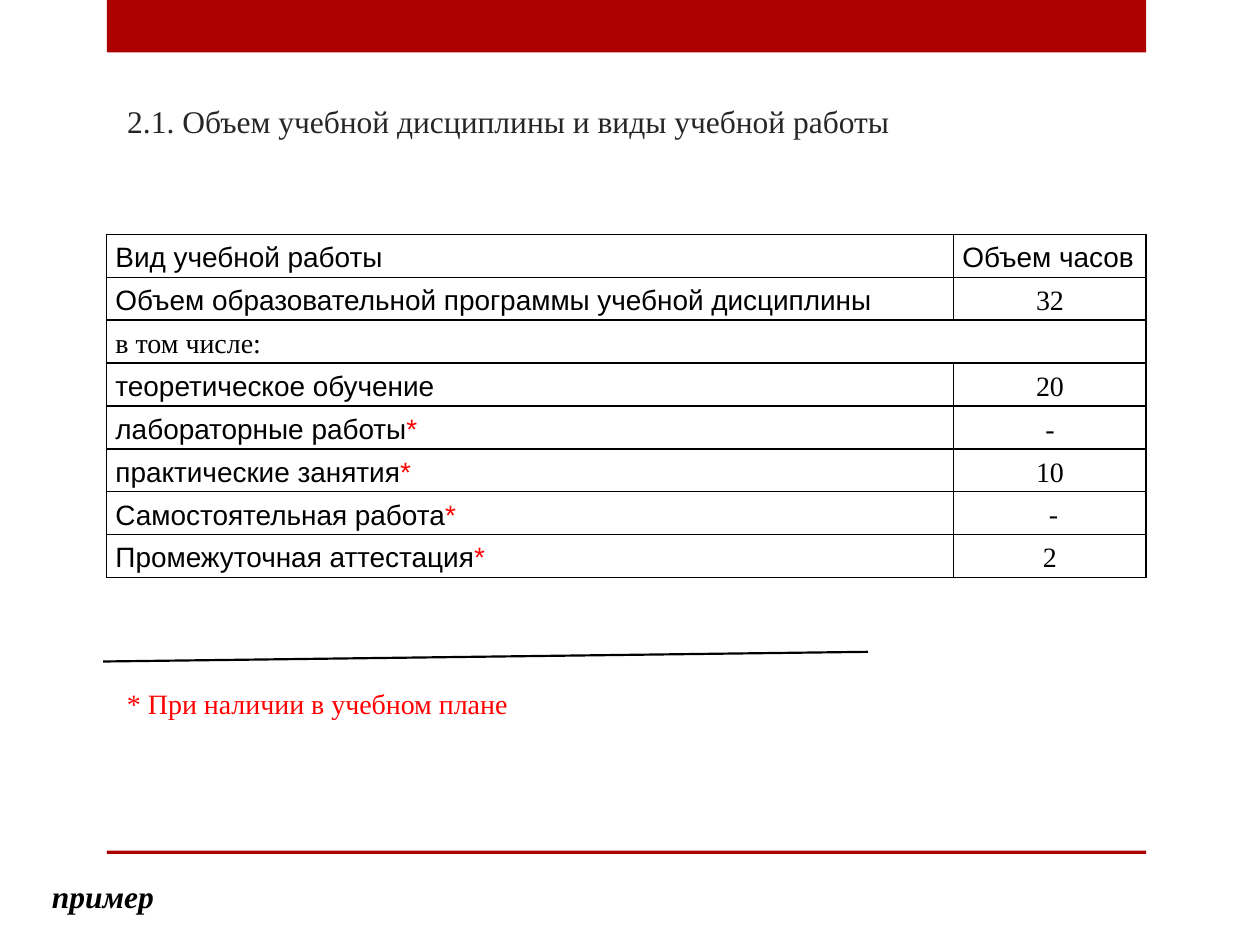
from lxml import etree
from pptx import Presentation
from pptx.dml.color import RGBColor
from pptx.enum import shapes, text
from pptx.oxml import ns, parse_xml
from pptx.util import Pt

COLORS = {"band": "AD0101", "title": "262626", "ink": "000000", "note": "FF0000"}
SERIF, SANS = "Times New Roman", "Arial"
A_NS = ns.nsdecls("a")

HOURS = [
    ("Вид учебной работы", "Объем часов"),
    ("Объем образовательной программы учебной дисциплины", "32"),
    ("в том числе:", None),
    ("теоретическое обучение", "20"),
    ("лабораторные работы*", "-"),
    ("практические занятия*", "10"),
    ("Самостоятельная работа*", "\N{NO-BREAK SPACE}-"),
    ("Промежуточная аттестация*", "2"),
]


def rgb(name):
    return RGBColor.from_string(COLORS[name])


def place(shape, box):
    shape.left, shape.top, shape.width, shape.height = map(Pt, box)


def add_run(paragraph, words, size, font, color, bold=False, italic=False):
    run = paragraph.add_run()
    run.text = words
    run.font.size, run.font.name = Pt(size), font
    run.font.bold, run.font.italic = bold, italic
    run.font.color.rgb = rgb(color)
    return run


def add_bands(slide, left, width):
    """Red band along the top edge and thin rule above the bottom margin."""
    for top, height in ((0, 30), (486, 2)):
        band = slide.shapes.add_shape(
            shapes.MSO_SHAPE.RECTANGLE, Pt(left), Pt(top), Pt(width), Pt(height))
        band.shadow.inherit = False
        band.fill.solid()
        band.fill.fore_color.rgb = rgb("band")
        band.line.fill.background()


def add_title(slide, box):
    title = slide.shapes.title
    place(title, box)
    frame = title.text_frame
    frame.auto_size = text.MSO_AUTO_SIZE.NONE
    frame.vertical_anchor = text.MSO_ANCHOR.TOP
    heading = frame.paragraphs[0]
    heading.alignment = text.PP_ALIGN.JUSTIFY
    add_run(heading, "2.1. Объем учебной дисциплины и виды учебной работы",
            18, SERIF, "title")


def format_cell(cell):
    cell.fill.background()
    cell.vertical_anchor = text.MSO_ANCHOR.MIDDLE
    cell.margin_left = cell.margin_right = Pt(5)
    cell.margin_top = cell.margin_bottom = 0
    properties = cell._tc.get_or_add_tcPr()
    for position, side in enumerate(("lnL", "lnR", "lnT", "lnB")):
        properties.insert(position, parse_xml(
            f'<a:{side} {A_NS} w="{Pt(1)}"><a:solidFill>'
            f'<a:srgbClr val="{COLORS["ink"]}"/></a:solidFill></a:{side}>'))


def fill_cell(cell, words, font, centered):
    entry = cell.text_frame.paragraphs[0]
    entry.alignment = text.PP_ALIGN.CENTER if centered else text.PP_ALIGN.LEFT
    entry.line_spacing, entry.space_after = 1.15, Pt(10)
    label = words.rstrip("*")
    add_run(entry, label, 16, font, "ink")
    if label != words:
        add_run(entry, "*", 16, font, "note")


def add_hours_table(slide, box, hours_width):
    left, top, width, height = box
    table = slide.shapes.add_table(len(HOURS), 2, *map(Pt, box)).table
    table.first_row = table.horz_banding = False
    table.columns[0].width = Pt(width - hours_width)
    table.columns[1].width = Pt(hours_width)
    for index, (work, hours) in enumerate(HOURS):
        table.rows[index].height = Pt(height / len(HOURS))
        work_cell, hours_cell = table.cell(index, 0), table.cell(index, 1)
        format_cell(work_cell)
        format_cell(hours_cell)
        fill_cell(work_cell, work, SERIF if hours is None else SANS, False)
        if hours is None:
            work_cell.merge(hours_cell)
        else:
            is_header = index == 0
            fill_cell(hours_cell, hours, SANS if is_header else SERIF, not is_header)


def add_example_label(slide, box):
    label = slide.shapes.add_textbox(*map(Pt, box)).text_frame
    label.word_wrap = False
    label.auto_size = text.MSO_AUTO_SIZE.SHAPE_TO_FIT_TEXT
    add_run(label.paragraphs[0], "пример", 18, SERIF, "ink", bold=True, italic=True)


def add_footnote(slide, box):
    """Slanted rule with the shadowed note below it."""
    left, top, width, height = box
    rule = slide.shapes.add_connector(
        shapes.MSO_CONNECTOR.STRAIGHT,
        Pt(left - 6.5), Pt(top - 11), Pt(left + 430.5), Pt(top - 16.5))
    rule.line.color.rgb = rgb("ink")
    rule.line.width = Pt(1.25)
    etree.SubElement(rule._element.spPr, ns.qn("a:effectLst"))

    frame = slide.shapes.add_textbox(*map(Pt, box)).text_frame
    frame.word_wrap = True
    note = frame.paragraphs[0]
    note.alignment = text.PP_ALIGN.JUSTIFY
    run = add_run(note, "* При наличии в учебном плане", 16, SERIF, "note")
    fill = run._r.get_or_add_rPr().find(ns.qn("a:solidFill"))
    fill.addnext(parse_xml(
        f'<a:effectLst {A_NS}><a:outerShdw blurRad="{Pt(3)}" dist="{Pt(3)}" '
        f'dir="5400000"><a:srgbClr val="{COLORS["ink"]}"><a:alpha val="40000"/>'
        '</a:srgbClr></a:outerShdw></a:effectLst>'))


def main():
    deck = Presentation()
    deck.slide_width, deck.slide_height = Pt(720), Pt(540)
    slide = deck.slides.add_slide(deck.slide_layouts[5])
    left, width = 61, 594
    add_bands(slide, left, width)
    add_title(slide, (65.5, 54.5, 595.5, 45.5))
    add_hours_table(slide, (left, 134, width, 196), hours_width=110)
    add_example_label(slide, (22.5, 497.5, 73.5, 29))
    add_footnote(slide, (65.5, 389, 380, 45.5))
    deck.save("out.pptx")


if __name__ == "__main__":
    main()
